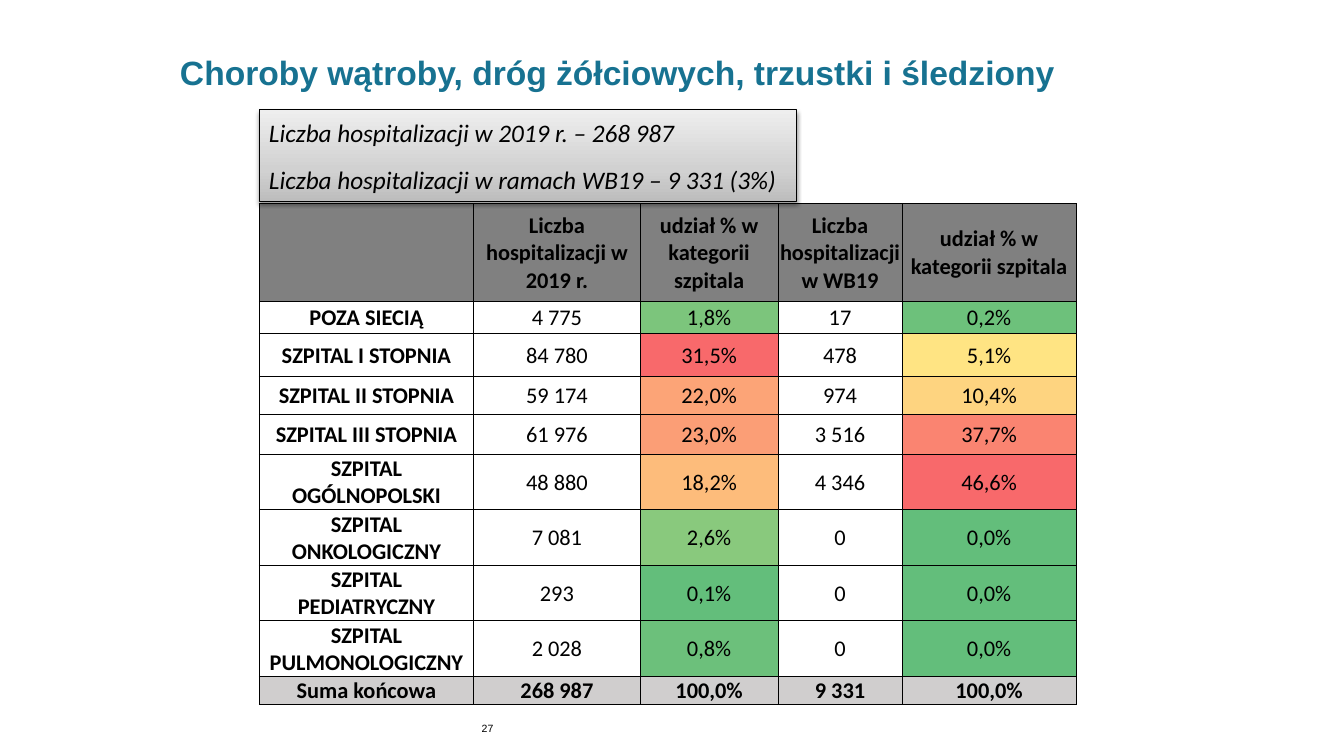
from copy import deepcopy

from pptx import Presentation
from pptx.dml.color import RGBColor as Rgb
from pptx.enum.shapes import MSO_SHAPE as Shape
from pptx.enum.text import MSO_ANCHOR as Anchor, PP_ALIGN as Align
from pptx.oxml import parse_xml
from pptx.oxml.ns import nsdecls, qn
from pptx.util import Cm, Pt

COLORS = {
    "title": "177291", "ink": "000000", "header": "808080", "total": "D0CECE",
    "banner_low": "BDBDBD", "banner_mid": "D1D1D1", "banner_high": "EEEEEE",
}
SHARE_COLORS = {
    "0,0%": "63BE7B", "0,1%": "63BE7B", "0,2%": "6DC17B", "0,8%": "6CC07B",
    "1,8%": "7CC57C", "2,6%": "89C97D", "5,1%": "FFE483", "10,4%": "FED480",
    "18,2%": "FDBC7B", "22,0%": "FCA477", "23,0%": "FB9E76", "31,5%": "F8696B",
    "37,7%": "FA8471", "46,6%": "F8696B",
}
COLUMN_WIDTHS = [5.41, 4.19, 3.48, 3.12, 4.39]
ROW_HEIGHTS = [2.46, 0.81, 1.09, 0.95, 1.0] + [1.4] * 4 + [0.71]
ROWS = [
    ["", "Liczba hospitalizacji w 2019 r.", "udział % w kategorii szpitala",
     "Liczba hospitalizacji w WB19", "udział % w kategorii szpitala"],
    ["POZA SIECIĄ", "4 775", "1,8%", "17", "0,2%"],
    ["SZPITAL I STOPNIA", "84 780", "31,5%", "478", "5,1%"],
    ["SZPITAL II STOPNIA", "59 174", "22,0%", "974", "10,4%"],
    ["SZPITAL III STOPNIA", "61 976", "23,0%", "3 516", "37,7%"],
    ["SZPITAL OGÓLNOPOLSKI", "48 880", "18,2%", "4 346", "46,6%"],
    ["SZPITAL ONKOLOGICZNY", "7 081", "2,6%", "0", "0,0%"],
    ["SZPITAL PEDIATRYCZNY", "293", "0,1%", "0", "0,0%"],
    ["SZPITAL PULMONOLOGICZNY", "2 028", "0,8%", "0", "0,0%"],
    ["Suma końcowa", "268 987", "100,0%", "9 331", "100,0%"],
]


def style_text(frame, font, size, color="ink", bold=False, italic=False,
               align=Align.LEFT, after=0):
    """Format every paragraph and run of a text frame."""
    frame.word_wrap = True
    for para in frame.paragraphs:
        para.alignment = align
        para.space_after = Pt(after)
        for span in para.runs:
            span.font.name = font
            span.font.size = Pt(size)
            span.font.bold = bold
            span.font.italic = italic
            span.font.color.rgb = Rgb.from_string(COLORS[color])


def add_title(page, left, top, width, height):
    """Place the slide heading."""
    frame = page.shapes.add_textbox(left, top, width, height).text_frame
    frame.text = "Choroby wątroby, dróg żółciowych, trzustki i śledziony"
    frame.vertical_anchor = Anchor.MIDDLE
    style_text(frame, "Arial", 24, "title", bold=True, align=Align.CENTER, after=12)


def add_page_number(page, left, top, width, height):
    """Place the page number."""
    frame = page.shapes.add_textbox(left, top, width, height).text_frame
    frame.text = "27"
    style_text(frame, "Arial", 7.5)


def add_banner(page, left, top, width, height):
    """Place the shaded box with the two totals."""
    banner = page.shapes.add_shape(Shape.RECTANGLE, left, top, width, height)
    banner.fill.gradient()
    banner.fill.gradient_angle = 90
    properties = banner._element.spPr
    stop_list = properties.find(".//" + qn("a:gsLst"))
    stop_list.append(deepcopy(stop_list[0]))
    shades = [(0, "banner_low"), (0.35, "banner_mid"), (1, "banner_high")]
    for stop, (position, shade) in zip(banner.fill.gradient_stops, shades):
        stop.position = position
        stop.color.rgb = Rgb.from_string(COLORS[shade])
    banner.line.color.rgb = Rgb.from_string(COLORS["ink"])
    banner.line.width = Pt(0.75)
    banner.shadow.inherit = False
    properties.find(qn("a:effectLst")).append(parse_xml(
        f'<a:outerShdw {nsdecls("a")} blurRad="{Pt(3.1)}" dist="{Pt(1.6)}" '
        f'dir="5400000" rotWithShape="0"><a:srgbClr val="{COLORS["ink"]}">'
        '<a:alpha val="38000"/></a:srgbClr></a:outerShdw>'))
    frame = banner.text_frame
    frame.text = ("Liczba hospitalizacji w 2019 r. – 268 987\n"
                  "Liczba hospitalizacji w ramach WB19 – 9 331 (3%)")
    frame.vertical_anchor = Anchor.MIDDLE
    style_text(frame, "Calibri", 18, italic=True, after=12)


def add_borders(cell):
    """Draw a thin line on all four sides of a cell."""
    properties = cell._tc.get_or_add_tcPr()
    for side in "LRTB":
        properties.append(parse_xml(
            f'<a:ln{side} {nsdecls("a")} w="{Pt(0.5)}"><a:solidFill>'
            f'<a:srgbClr val="{COLORS["ink"]}"/></a:solidFill></a:ln{side}>'))


def add_hospital_table(page, left, top, width, height):
    """Place the table of hospitalisations by hospital category."""
    table = page.shapes.add_table(
        len(ROWS), len(COLUMN_WIDTHS), left, top, width, height).table
    table.first_row = table.horz_banding = False
    for column, column_width in zip(table.columns, COLUMN_WIDTHS):
        column.width = Cm(column_width)
    last = len(ROWS) - 1
    edge_fills = {0: COLORS["header"], last: COLORS["total"]}
    for r, values in enumerate(ROWS):
        table.rows[r].height = Cm(ROW_HEIGHTS[r])
        for c, value in enumerate(values):
            cell = table.cell(r, c)
            add_borders(cell)
            fill = edge_fills.get(r, SHARE_COLORS.get(value))
            if fill:
                cell.fill.solid()
                cell.fill.fore_color.rgb = Rgb.from_string(fill)
            else:
                cell.fill.background()
            cell.margin_left = cell.margin_right = cell.margin_top = Cm(0.03)
            cell.margin_bottom = 0
            cell.vertical_anchor = Anchor.BOTTOM if (r, c) == (last, 0) else Anchor.MIDDLE
            cell.text_frame.text = value
            style_text(cell.text_frame, "Calibri", 16,
                       bold=r in edge_fills or c == 0, align=Align.CENTER)


def main():
    """Build the slide and save the deck."""
    deck = Presentation()
    deck.slide_width, deck.slide_height = Cm(33.87), Cm(19.05)
    page = deck.slides.add_slide(deck.slide_layouts[6])
    left = Cm(6.53)
    add_page_number(page, Cm(11.89), Cm(18.08), Cm(2), Cm(0.74))
    add_title(page, Cm(3.99), Cm(1.07), Cm(23.14), Cm(1.5))
    add_hospital_table(page, left, Cm(5.13), Cm(sum(COLUMN_WIDTHS)), Cm(sum(ROW_HEIGHTS)))
    add_banner(page, left, Cm(2.77), Cm(13.54), Cm(2.31))
    deck.save("out.pptx")


if __name__ == "__main__":
    main()
